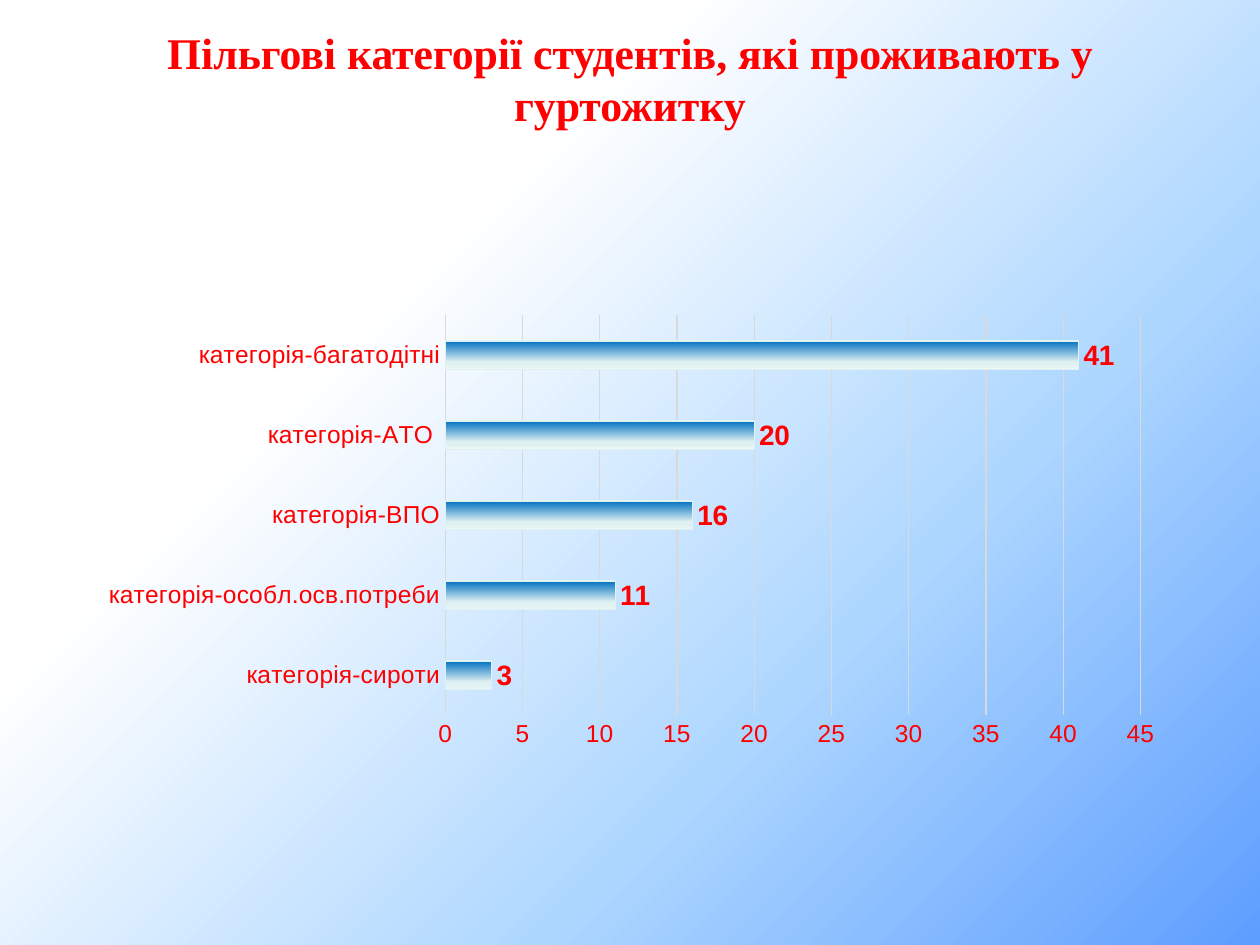
import pptx
import pptx.chart.data
import pptx.dml.color
import pptx.enum.chart
import pptx.enum.text
import pptx.oxml
import pptx.oxml.ns
import pptx.util

Inches = pptx.util.Inches
Pt = pptx.util.Pt
RED = "FF0000"
GRID = "D9D9D9"
CATEGORIES = {
    "категорія-сироти": 3,
    "категорія-особл.осв.потреби": 11,
    "категорія-ВПО": 16,
    "категорія-АТО ": 20,
    "категорія-багатодітні": 41,
}


def color(hex_value):
    """Turn a hex string into a colour."""
    return pptx.dml.color.RGBColor.from_string(hex_value)


def set_format(target, values):
    """Set each attribute of the target from a dict."""
    for name, value in values.items():
        setattr(target, name, value)


def set_font(font, **values):
    """Set a red font with the given format values."""
    set_format(font, values)
    font.color.rgb = color(RED)


def set_line(line, hex_value):
    """Give a line its colour and the common width."""
    line.color.rgb = color(hex_value)
    line.width = Pt(0.75)


def set_gradient(owner, fill, angle, stops):
    """Fill with a linear gradient of percent and colour stops."""
    fill.gradient()
    fill.gradient_angle = angle
    stop_list = next(owner.iter(pptx.oxml.ns.qn("a:gsLst")))
    for stop in list(stop_list):
        stop_list.remove(stop)
    for percent, hex_value in stops:
        stop_list.append(pptx.oxml.parse_xml(
            f'<a:gs {pptx.oxml.ns.nsdecls("a")} pos="{percent * 1000}">'
            f'<a:srgbClr val="{hex_value}"/></a:gs>'))


def set_plot_area(chart, x, y, w, h):
    """Place the inner plot area by fractions of the chart."""
    area = chart._chartSpace.chart.plotArea
    for old in area.findall(pptx.oxml.ns.qn("c:layout")):
        area.remove(old)
    sizes = "".join(f'<c:{key} val="{value}"/>'
                    for key, value in zip("xywh", (x, y, w, h)))
    area.insert(0, pptx.oxml.parse_xml(
        f'<c:layout {pptx.oxml.ns.nsdecls("c")}><c:manualLayout>'
        '<c:layoutTarget val="inner"/><c:xMode val="edge"/>'
        f'<c:yMode val="edge"/>{sizes}</c:manualLayout></c:layout>'))


def add_title(page, left, top, width, height):
    """Add the centred slide title."""
    box = page.shapes.add_textbox(left, top, width, height)
    set_format(box.text_frame, {
        "word_wrap": True,
        "vertical_anchor": pptx.enum.text.MSO_ANCHOR.MIDDLE,
    })
    para = box.text_frame.paragraphs[0]
    para.alignment = pptx.enum.text.PP_ALIGN.CENTER
    span = para.add_run()
    span.text = "Пільгові категорії студентів, які проживають у гуртожитку"
    set_font(span.font, name="Times New Roman", size=Pt(25), bold=True)


def style_axes(chart):
    """Style the category and value axes."""
    for axis in (chart.category_axis, chart.value_axis):
        tick_none = pptx.enum.chart.XL_TICK_MARK.NONE
        set_format(axis, {"major_tick_mark": tick_none,
                          "minor_tick_mark": tick_none})
        set_font(axis.tick_labels.font, name="Arial", size=Pt(14), bold=False)
    set_line(chart.category_axis.format.line, GRID)
    set_format(chart.value_axis, {"minimum_scale": 0, "maximum_scale": 45,
                                  "major_unit": 5, "has_major_gridlines": True})
    chart.value_axis.format.line.fill.background()
    set_line(chart.value_axis.major_gridlines.format.line, GRID)


def add_category_chart(page, left, top, width, height):
    """Add the bar chart of student categories."""
    data = pptx.chart.data.CategoryChartData()
    data.categories = list(CATEGORIES)
    data.add_series("Series 1", list(CATEGORIES.values()))
    kind = pptx.enum.chart.XL_CHART_TYPE.BAR_CLUSTERED
    chart = page.shapes.add_chart(kind, left, top, width, height, data).chart
    set_format(chart, {"has_title": False, "has_legend": False})
    set_font(chart.font, name="Arial", size=Pt(14))
    style_axes(chart)
    set_plot_area(chart, 0.33, 0.02, 0.64, 0.89)

    plot = chart.plots[0]
    set_format(plot, {"gap_width": 182, "vary_by_categories": False,
                      "has_data_labels": True})
    set_format(plot.data_labels, {
        "show_value": True,
        "position": pptx.enum.chart.XL_LABEL_POSITION.OUTSIDE_END,
    })
    set_font(plot.data_labels.font, name="Arial", size=Pt(16), bold=True)
    series = plot.series[0]
    series.invert_if_negative = False
    set_gradient(series._element, series.format.fill, 270,
                 [(0, "0070C0"), (74, "E0F1F2"), (83, "E0F1F2"), (100, "EBF6F7")])
    set_line(series.format.line, "E0F1F2")


def main():
    """Build and save the slide."""
    deck = pptx.Presentation()
    set_format(deck, {"slide_width": Inches(10), "slide_height": Inches(7.5)})
    page = deck.slides.add_slide(deck.slide_layouts[6])
    set_gradient(page._element, page.background.fill, 315,
                 [(0, "FFFFFF"), (31, "FFFFFF"), (67, "AED7FF"), (100, "5E9EFF")])
    add_title(page, Inches(0.5), Inches(0.17), Inches(9), Inches(0.9))
    add_category_chart(page, Inches(0.69), Inches(2.43), Inches(8.62), Inches(3.57))
    deck.save("out.pptx")


if __name__ == "__main__":
    main()
